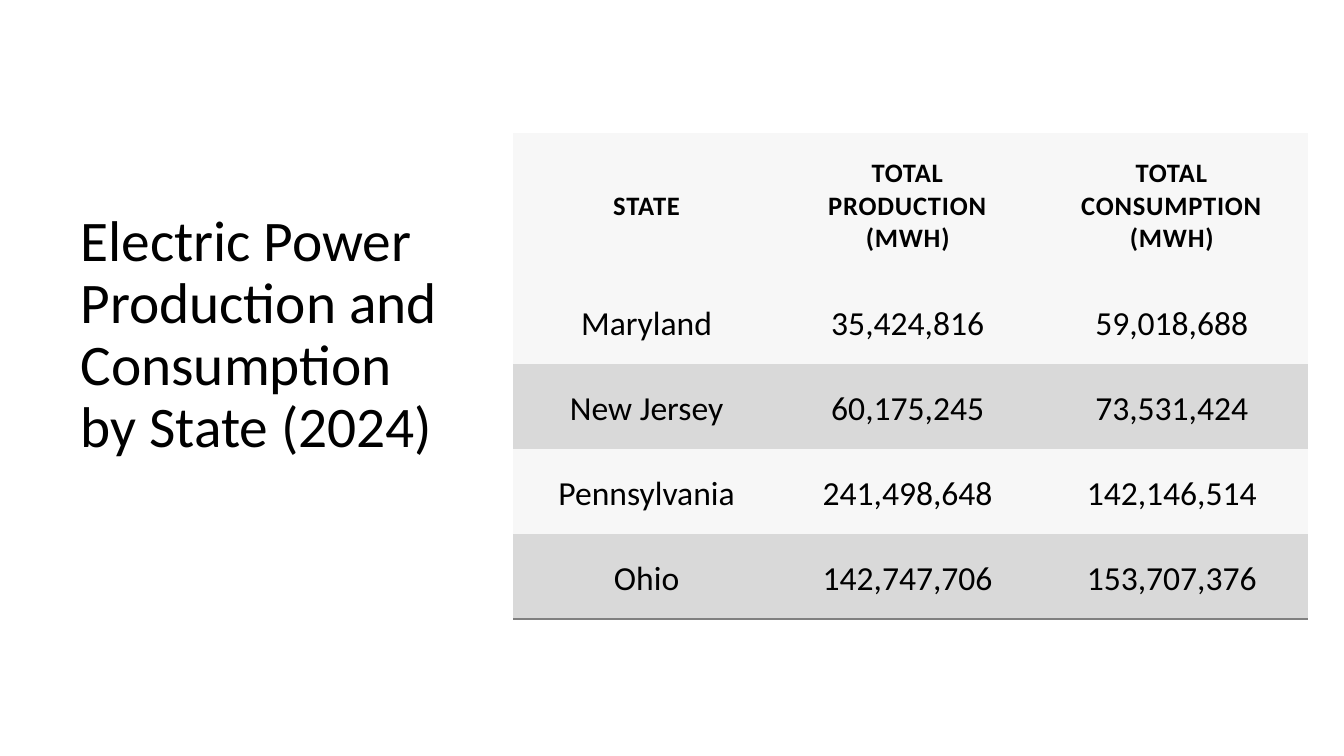
import pptx
import pptx.util
import pptx.dml.color
import pptx.enum.text
import pptx.oxml
import pptx.oxml.ns

Cm = pptx.util.Cm
Pt = pptx.util.Pt
MID = pptx.enum.text.MSO_ANCHOR.MIDDLE
hues = {"ink": "000000", "pale": "F7F7F7", "gray": "D9D9D9", "rule": "808080"}


def color(name):
    return pptx.dml.color.RGBColor.from_string(hues[name])


def write(par, text, size, bold=False):
    run = par.add_run()
    run.text = text
    run.font.name = "Calibri"
    run.font.size = Pt(size)
    run.font.bold = bold
    run.font.color.rgb = color("ink")
    return run


deck = pptx.Presentation()
deck.slide_width = Cm(33.87)
deck.slide_height = Cm(19.05)
slide = deck.slides.add_slide(deck.slide_layouts[6])

box = slide.shapes.add_textbox(Cm(1.78), Cm(1.78), Cm(9.9), Cm(9.93))
title = box.text_frame
title.word_wrap = True
title.vertical_anchor = pptx.enum.text.MSO_ANCHOR.BOTTOM
title.paragraphs[0].line_spacing = 0.9
write(title.paragraphs[0], "Electric Power Production and Consumption by State (2024)", 41)

rows = [
    ("STATE", "TOTAL PRODUCTION (MWH)", "TOTAL CONSUMPTION (MWH)"),
    ("Maryland", "35,424,816", "59,018,688"),
    ("New Jersey", "60,175,245", "73,531,424"),
    ("Pennsylvania", "241,498,648", "142,146,514"),
    ("Ohio", "142,747,706", "153,707,376"),
]
wide = [6.73, 6.43, 6.88]
frame = slide.shapes.add_table(len(rows), len(wide), Cm(12.93), Cm(3.35), Cm(sum(wide)), Cm(12.27))
table = frame.table
table.first_row = False
table.horz_banding = False
style = frame._element.find(".//" + pptx.oxml.ns.qn("a:tableStyleId"))
style.text = "{2D5ABB26-0587-4C30-8999-92F81FD0307C}"
for col, width in zip(table.columns, wide):
    col.width = Cm(width)

for i, row in enumerate(rows):
    head = i == 0
    table.rows[i].height = Cm(3.69 if head else 2.14)
    for j, text in enumerate(row):
        cell = table.cell(i, j)
        cell.margin_left = cell.margin_right = cell.margin_top = Cm(0.58 if head else 0.61)
        cell.margin_bottom = Cm(0.58 if head else 0.38)
        cell.fill.solid()
        cell.fill.fore_color.rgb = color("pale" if head or i % 2 else "gray")
        par = cell.text_frame.paragraphs[0]
        par.alignment = pptx.enum.text.PP_ALIGN.CENTER
        run = write(par, text, 19 if head else 24, head)
        if head:
            cell.vertical_anchor = MID
            run._r.get_or_add_rPr().set("spc", "60")
        if i == len(rows) - 1:
            line = pptx.oxml.parse_xml(
                f'<a:lnB {pptx.oxml.ns.nsdecls("a")} w="12700"><a:solidFill>'
                f'<a:srgbClr val="{hues["rule"]}"/></a:solidFill></a:lnB>'
            )
            cell._tc.get_or_add_tcPr().insert(0, line)

deck.save("out.pptx")
